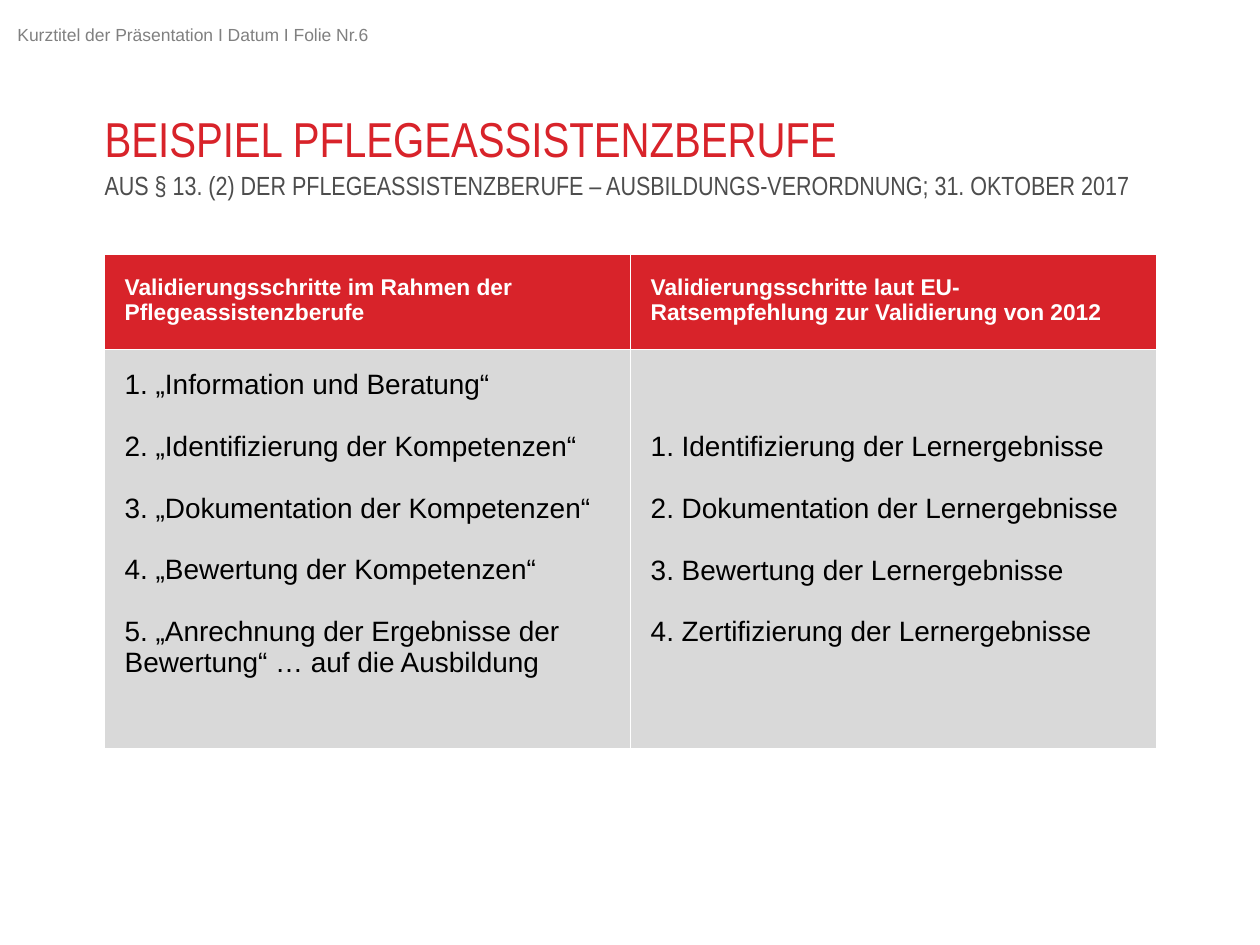
from lxml import etree
from pptx import Presentation
from pptx.dml.color import RGBColor
from pptx.enum.text import MSO_ANCHOR, MSO_AUTO_SIZE, PP_ALIGN
from pptx.oxml.ns import qn
from pptx.util import Inches, Pt

LEFT, MIDDLE, TOP = PP_ALIGN.LEFT, MSO_ANCHOR.MIDDLE, MSO_ANCHOR.TOP
NO_FIT = MSO_AUTO_SIZE.NONE

COLORS = {"red": "D8232A", "grey": "D9D9D9", "subtitle": "4D4D4D",
          "label": "808080", "white": "FFFFFF", "black": "000000"}

FORMATS = {
    "label": {"name": "Arial", "size": Pt(10), "bold": False, "color": "label"},
    "title": {"name": "Arial Narrow", "size": Pt(28), "bold": False, "color": "red"},
    "subtitle": {"name": "Arial Narrow", "size": Pt(15), "bold": False, "color": "subtitle"},
    "heading": {"name": "Arial", "size": Pt(13), "bold": True, "color": "white"},
    "step": {"name": "Arial", "size": Pt(16), "bold": False, "color": "black"},
}

HEADINGS = ["Validierungsschritte im Rahmen der Pflegeassistenzberufe",
            "Validierungsschritte laut EU-Ratsempfehlung zur Validierung von 2012"]
CARE_STEPS = ["1. „Information und Beratung“",
              "2. „Identifizierung der Kompetenzen“",
              "3. „Dokumentation der Kompetenzen“",
              "4. „Bewertung der Kompetenzen“",
              "5. „Anrechnung der Ergebnisse der Bewertung“ … auf die Ausbildung"]
EU_STEPS = ["1. Identifizierung der Lernergebnisse",
            "2. Dokumentation der Lernergebnisse",
            "3. Bewertung der Lernergebnisse",
            "4. Zertifizierung der Lernergebnisse"]

MARGIN = 0.83
WIDTH = 8.35
CELL_INSET = 0.16
STEP_GAP = Pt(17.5)
STEP_PITCH = 0.49  # one step and its gap


class SlideBuilder:
    def __init__(self, slide):
        self.slide = slide

    def fill_text(self, frame, lines, style, gap=Pt(0)):
        """Fill a text frame with one paragraph per line."""
        for index, line in enumerate(lines):
            paragraph = frame.paragraphs[0] if index == 0 else frame.add_paragraph()
            paragraph.text = line
            paragraph.alignment = LEFT
            paragraph.space_before = gap if index else Pt(0)
            for key, value in FORMATS[style].items():
                if key == "color":
                    paragraph.font.color.rgb = RGBColor.from_string(COLORS[value])
                else:
                    setattr(paragraph.font, key, value)

    def label(self, text, left, top, width, height):
        box = self.slide.shapes.add_textbox(*map(Inches, (left, top, width, height)))
        box.text_frame.word_wrap = True
        self.fill_text(box.text_frame, [text], "label")

    def placeholder(self, index, text, style, top, height, line_spacing=1.0):
        holder = self.slide.placeholders[index]
        holder.left, holder.top = Inches(MARGIN), Inches(top)
        holder.width, holder.height = Inches(WIDTH), Inches(height)
        frame = holder.text_frame
        settings = {"margin_left": 0, "margin_right": 0, "margin_top": 0, "margin_bottom": 0,
                    "vertical_anchor": MIDDLE, "auto_size": NO_FIT, "word_wrap": True}
        for key, value in settings.items():
            setattr(frame, key, value)
        self.fill_text(frame, [text], style)
        frame.paragraphs[0].line_spacing = line_spacing

    def borders(self, cell, bottom):
        """Draw white cell borders, one point wide except at the bottom."""
        properties = cell._tc.get_or_add_tcPr()
        widths = {"a:lnL": Pt(1), "a:lnR": Pt(1), "a:lnT": Pt(1), "a:lnB": bottom}
        for position, (tag, width) in enumerate(widths.items()):
            line = etree.Element(qn(tag), w=str(width))
            fill = etree.SubElement(line, qn("a:solidFill"))
            etree.SubElement(fill, qn("a:srgbClr"), val=COLORS["white"])
            properties.insert(position, line)

    def cell(self, cell, lines, style, fill, top_inset=CELL_INSET, bottom_border=Pt(1)):
        cell.fill.solid()
        cell.fill.fore_color.rgb = RGBColor.from_string(COLORS[fill])
        cell.margin_left = cell.margin_right = cell.margin_bottom = Inches(CELL_INSET)
        cell.margin_top = Inches(top_inset)
        cell.vertical_anchor = TOP
        self.fill_text(cell.text_frame, lines, style, STEP_GAP)
        self.borders(cell, bottom_border)

    def table(self, top, row_heights, headings, step_columns):
        """Each step column is a pair of its steps and its top inset."""
        table = self.slide.shapes.add_table(
            len(row_heights), len(headings), Inches(MARGIN), Inches(top),
            Inches(WIDTH), Inches(sum(row_heights))).table
        table.first_row = table.horz_banding = False
        for row, height in zip(table.rows, row_heights):
            row.height = Inches(height)
        for column, (heading, (steps, inset)) in enumerate(zip(headings, step_columns)):
            self.cell(table.cell(0, column), [heading], "heading", "red")
            self.cell(table.cell(1, column), steps, "step", "grey", inset, Pt(3))


def main():
    deck = Presentation()
    deck.slide_width, deck.slide_height = Inches(10), Inches(7.5)
    builder = SlideBuilder(deck.slides.add_slide(deck.slide_layouts[0]))

    # Running header
    builder.label("Kurztitel der Präsentation I Datum I Folie Nr.6", 0.04, 0.14, 4.87, 0.27)

    # Title and subtitle
    builder.placeholder(0, "BEISPIEL PFLEGEASSISTENZBERUFE", "title", 0.91, 0.42, 0.9)
    builder.placeholder(
        1, "AUS § 13. (2) DER PFLEGEASSISTENZBERUFE – AUSBILDUNGS-VERORDNUNG; 31. OKTOBER 2017",
        "subtitle", 1.34, 0.25)

    # Comparison: the EU steps start level with the second care step
    builder.table(2.02, [0.74, 3.18], HEADINGS,
                  [(CARE_STEPS, CELL_INSET), (EU_STEPS, CELL_INSET + STEP_PITCH)])

    deck.save("out.pptx")


if __name__ == "__main__":
    main()
